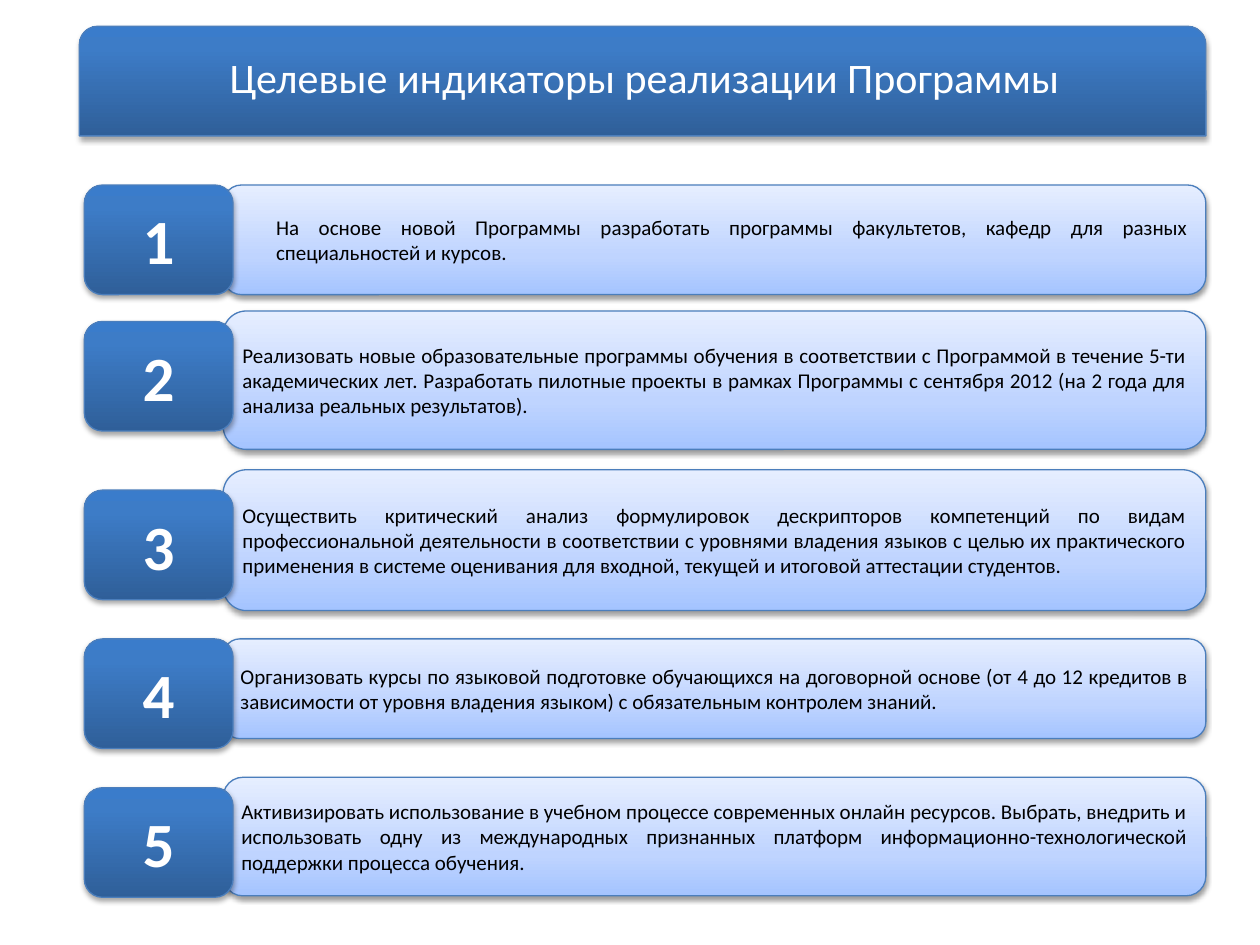
"""Build the slide of target indicators for the programme."""
from dataclasses import dataclass

import pptx
import pptx.dml.color
import pptx.enum.shapes
import pptx.enum.text
import pptx.oxml
import pptx.oxml.ns
import pptx.util

Cm = pptx.util.Cm
Pt = pptx.util.Pt
Shapes = pptx.enum.shapes.MSO_SHAPE
Align = pptx.enum.text.PP_ALIGN
Anchor = pptx.enum.text.MSO_ANCHOR


@dataclass(frozen=True)
class Look:
    stops: tuple[tuple[int, str], ...]
    shadow_opacity: int
    shadow_distance: float


@dataclass(frozen=True)
class Indicator:
    text: str
    top: float
    height: float
    badge_top: float
    indent: float = 0


DARK = Look(((0, "2F5F99"), (80, "3D7CC7"), (100, "3A7CCB")), 35, 1.8)
LIGHT = Look(((0, "A4C4FF"), (35, "BFD4FF"), (100, "E6EEFF")), 38, 1.6)
OUTLINE = "4B7EBC"
FONT = "Calibri"
RIGHT = 24.31
PANEL_LEFT = 4.5
BADGE_LEFT, BADGE_WIDTH, BADGE_HEIGHT = 1.7, 3.0, 2.21

INDICATORS = (
    Indicator("На основе новой Программы разработать программы факультетов, кафедр "
              "для разных специальностей и курсов.", 3.73, 2.21, 3.73, 0.71),
    Indicator("Реализовать новые образовательные программы обучения в соответствии с "
              "Программой в течение 5-ти академических лет. Разработать пилотные проекты "
              "в рамках Программы с сентября 2012 (на 2 года для анализа реальных "
              "результатов).", 6.27, 2.79, 6.48),
    Indicator("Осуществить критический анализ формулировок дескрипторов компетенций по "
              "видам профессиональной деятельности в соответствии с уровнями владения "
              "языков с целью их практического применения в системе оценивания для "
              "входной, текущей и итоговой аттестации студентов.", 9.47, 2.84, 9.88),
    Indicator("Организовать курсы по языковой подготовке обучающихся на договорной "
              "основе (от 4 до 12 кредитов в зависимости от уровня владения языком) "
              "с обязательным контролем знаний.", 12.88, 2.01, 12.88),
    Indicator("Активизировать использование в учебном процессе современных онлайн "
              "ресурсов. Выбрать, внедрить и использовать одну из международных "
              "признанных платформ информационно-технологической поддержки процесса "
              "обучения.", 15.67, 2.39, 15.88),
)


def color(value: str) -> pptx.dml.color.RGBColor:
    return pptx.dml.color.RGBColor.from_string(value)


def add_block(shapes, kind, left: float, top: float, width: float, height: float, look: Look):
    block = shapes.add_shape(kind, Cm(left), Cm(top), Cm(width), Cm(height))
    properties = block.element.spPr
    namespace = pptx.oxml.ns.nsdecls("a")
    stops = "".join(f'<a:gs pos="{position * 1000}"><a:srgbClr val="{value}"/></a:gs>'
                    for position, value in look.stops)
    properties.append(pptx.oxml.parse_xml(
        f'<a:gradFill {namespace} rotWithShape="1"><a:gsLst>{stops}</a:gsLst>'
        '<a:lin ang="16200000" scaled="0"/></a:gradFill>'))
    block.line.color.rgb = color(OUTLINE)
    block.line.width = Pt(0.75)
    block.shadow.inherit = False
    effects = properties.find(pptx.oxml.ns.qn("a:effectLst"))
    effects.append(pptx.oxml.parse_xml(
        f'<a:outerShdw {namespace} blurRad="{Pt(3.1)}" dist="{Pt(look.shadow_distance)}" '
        'dir="5400000" rotWithShape="0"><a:srgbClr val="000000">'
        f'<a:alpha val="{look.shadow_opacity * 1000}"/></a:srgbClr></a:outerShdw>'))
    return block


def write(shape, text: str, size: int, ink: str, align, anchor, bold: bool = False) -> None:
    frame = shape.text_frame
    frame.text = text
    frame.word_wrap = True
    frame.vertical_anchor = anchor
    paragraph = frame.paragraphs[0]
    paragraph.alignment = align
    font = paragraph.runs[0].font
    font.name, font.size, font.bold = FONT, Pt(size), bold
    font.color.rgb = color(ink)


def add_heading(slide) -> None:
    add_block(slide.shapes, Shapes.ROUND_2_SAME_RECTANGLE,
              1.6, 0.53, RIGHT - 1.6, 2.21, DARK)
    heading = slide.shapes.title
    heading.left, heading.top, heading.width, heading.height = map(Cm, (2.79, 0.91, 20.4, 1.27))
    write(heading, "Целевые индикаторы реализации Программы", 24, "FFFFFF",
          Align.CENTER, Anchor.TOP)
    heading.text_frame.auto_size = pptx.enum.text.MSO_AUTO_SIZE.SHAPE_TO_FIT_TEXT
    heading.element.getparent().append(heading.element)


def add_indicator(slide, number: int, indicator: Indicator) -> None:
    row = slide.shapes.add_group_shape().shapes
    panel = add_block(row, Shapes.ROUNDED_RECTANGLE, PANEL_LEFT, indicator.top,
                      RIGHT - PANEL_LEFT, indicator.height, LIGHT)
    write(panel, indicator.text, 12, "000000", Align.JUSTIFY, Anchor.MIDDLE)
    if indicator.indent:
        margins = panel.element.find(".//" + pptx.oxml.ns.qn("a:pPr"))
        margins.set("marL", str(Cm(indicator.indent)))
    badge = add_block(row, Shapes.ROUNDED_RECTANGLE, BADGE_LEFT, indicator.badge_top,
                      BADGE_WIDTH, BADGE_HEIGHT, DARK)
    write(badge, str(number), 36, "FFFFFF", Align.CENTER, Anchor.MIDDLE, bold=True)


def main() -> None:
    deck = pptx.Presentation()
    deck.slide_width, deck.slide_height = Cm(25.4), Cm(19.05)
    slide = deck.slides.add_slide(deck.slide_layouts.get_by_name("Title Only"))
    add_heading(slide)
    for number, indicator in enumerate(INDICATORS, start=1):
        add_indicator(slide, number, indicator)
    deck.save("out.pptx")


if __name__ == "__main__":
    main()
